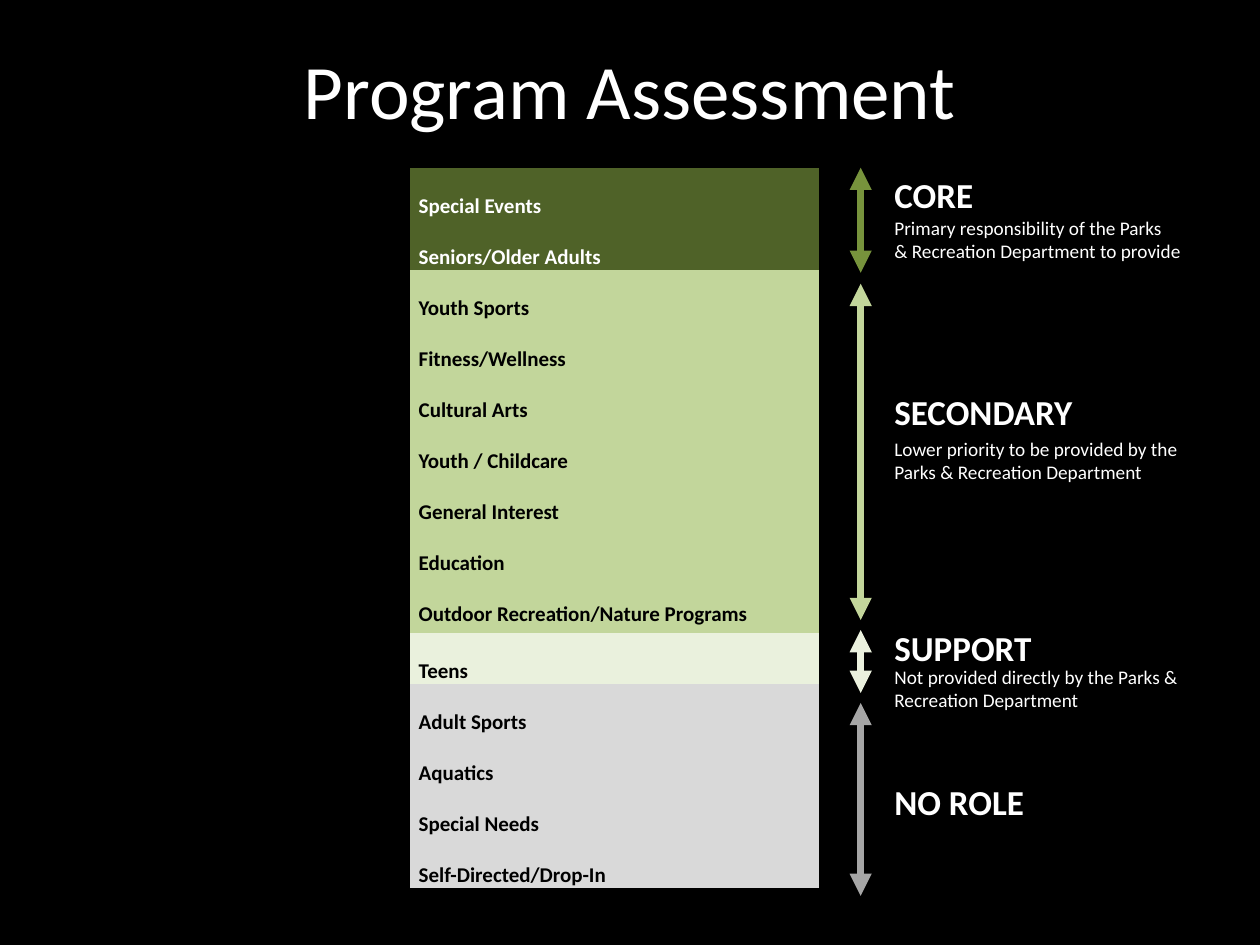
from lxml.etree import SubElement
from pptx import Presentation
from pptx.dml.color import RGBColor
from pptx.enum.shapes import MSO_CONNECTOR as Connector
from pptx.enum.text import MSO_ANCHOR as Anchor, PP_ALIGN as Align
from pptx.oxml.ns import qn
from pptx.util import Cm, Pt

COLORS = {
    "black": "000000", "white": "FFFFFF",
    "core": "4F6228", "secondary": "C2D69B", "support": "EAF1DD", "none": "D9D9D9",
    "core_arrow": "77933C", "secondary_arrow": "C3D69B",
    "support_arrow": "EBF1DE", "none_arrow": "A6A6A6",
}
FONT = "Calibri"

# Content: tier, text color, programs
TIERS = [
    ("core", "white", ["Special Events", "Seniors/Older Adults"]),
    ("secondary", "black", [
        "Youth Sports", "Fitness/Wellness", "Cultural Arts", "Youth / Childcare",
        "General Interest", "Education", "Outdoor Recreation/Nature Programs"]),
    ("support", "black", ["Teens"]),
    ("none", "black", ["Adult Sports", "Aquatics", "Special Needs", "Self-Directed/Drop-In"]),
]
# Tier, arrow top and bottom, heading and its top, note and its top (cm)
LEGEND = [
    ("core", 3.38, 5.5, "CORE", 3.38,
     "Primary responsibility of the Parks\v& Recreation Department to provide", 4.24),
    ("secondary", 5.72, 12.5, "SECONDARY", 7.75,
     "Lower priority to be provided by the Parks & Recreation Department", 8.69),
    ("support", 12.7, 13.97, "SUPPORT", 12.5,
     "Not provided directly by the Parks & Recreation Department", 13.28),
    ("none", 14.17, 18.06, "NO ROLE", 15.6, None, None),
]

# Layout (cm)
TABLE_LEFT, TABLE_TOP, TABLE_WIDTH = 8.26, 3.38, 8.26
ROW_HEIGHT, TALL_ROW_HEIGHT, TALL_ROW = 1.03, 1.14, "Outdoor Recreation/Nature Programs"
ARROW_X, LEGEND_LEFT, LEGEND_WIDTH = 17.35, 17.78, 6.78


def rgb(name):
    return RGBColor.from_string(COLORS[name])


def style(para, size, color, bold=False):
    for span in para.runs:
        span.font.name = FONT
        span.font.size = Pt(size)
        span.font.bold = bold
        span.font.color.rgb = rgb(color)


def add_text(page, text, left, top, width, height, size, bold=False):
    box = page.shapes.add_textbox(Cm(left), Cm(top), Cm(width), Cm(height))
    frame = box.text_frame
    frame.word_wrap = True
    frame.text = text
    style(frame.paragraphs[0], size, "white", bold)
    return frame


def add_arrow(page, top, bottom, color):
    arrow = page.shapes.add_connector(
        Connector.STRAIGHT, Cm(ARROW_X), Cm(top), Cm(ARROW_X), Cm(bottom))
    arrow.line.color.rgb = rgb(color)
    arrow.line.width = Pt(4.25)
    outline = arrow.line._get_or_add_ln()
    for end in ("a:headEnd", "a:tailEnd"):
        SubElement(outline, qn(end), type="triangle")
    SubElement(arrow._element.spPr, qn("a:effectLst"))


def add_programs(page):
    rows = [(tier, color, name) for tier, color, names in TIERS for name in names]
    heights = [TALL_ROW_HEIGHT if name == TALL_ROW else ROW_HEIGHT for _, _, name in rows]
    table = page.shapes.add_table(
        len(rows), 1, Cm(TABLE_LEFT), Cm(TABLE_TOP), Cm(TABLE_WIDTH), Cm(sum(heights))).table
    table.first_row = table.horz_banding = False
    # Plain table style without grid lines
    table._tbl.tblPr.find(qn("a:tableStyleId")).text = "{2D5ABB26-0587-4C30-8999-92F81FD0307C}"
    for index, (tier, color, name) in enumerate(rows):
        table.rows[index].height = Cm(heights[index])
        cell = table.cell(index, 0)
        cell.fill.solid()
        cell.fill.fore_color.rgb = rgb(tier)
        cell.margin_left = cell.margin_right = Cm(0.18)
        cell.margin_top = cell.margin_bottom = 0
        cell.text_frame.text = name
        para = cell.text_frame.paragraphs[0]
        para.line_spacing = 2.0
        para.space_after = Pt(6)
        style(para, 12, color, bold=True)


def main():
    deck = Presentation()
    deck.slide_width, deck.slide_height = Cm(25.4), Cm(19.05)
    page = deck.slides.add_slide(deck.slide_layouts[6])
    page.background.fill.solid()
    page.background.fill.fore_color.rgb = rgb("black")

    # Title
    title = add_text(page, "Program Assessment", 1.27, 0.2, 22.86, 3.18, 44)
    title.vertical_anchor = Anchor.MIDDLE
    title.paragraphs[0].alignment = Align.CENTER

    # Program list
    add_programs(page)

    # Legend of roles
    for tier, top, bottom, heading, heading_top, note, note_top in LEGEND:
        add_arrow(page, top, bottom, tier + "_arrow")
        add_text(page, heading, LEGEND_LEFT, heading_top, LEGEND_WIDTH, 1.07, 20, bold=True)
        if note:
            add_text(page, note, LEGEND_LEFT, note_top, LEGEND_WIDTH, 1.07, 11)

    deck.save("out.pptx")


if __name__ == "__main__":
    main()
